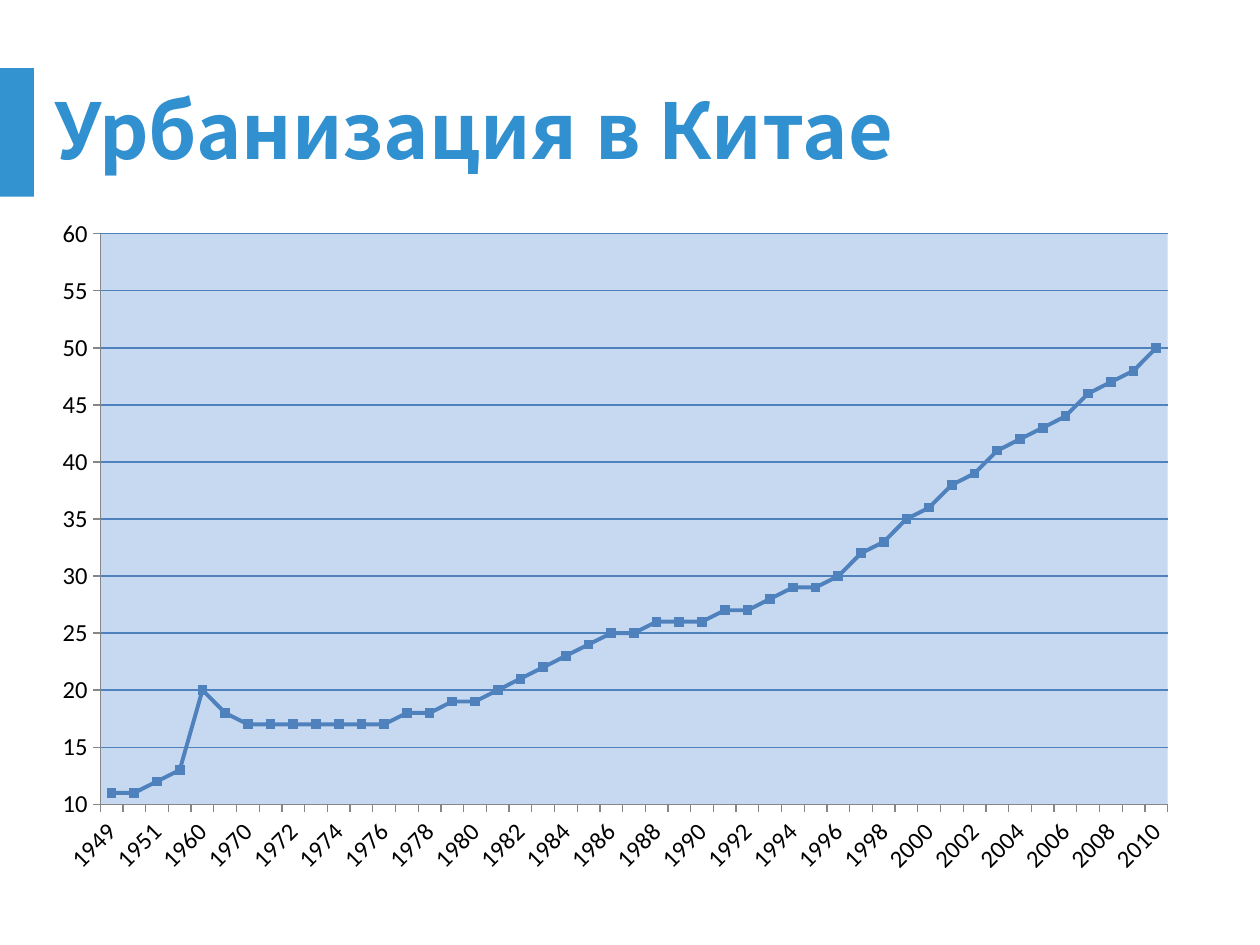
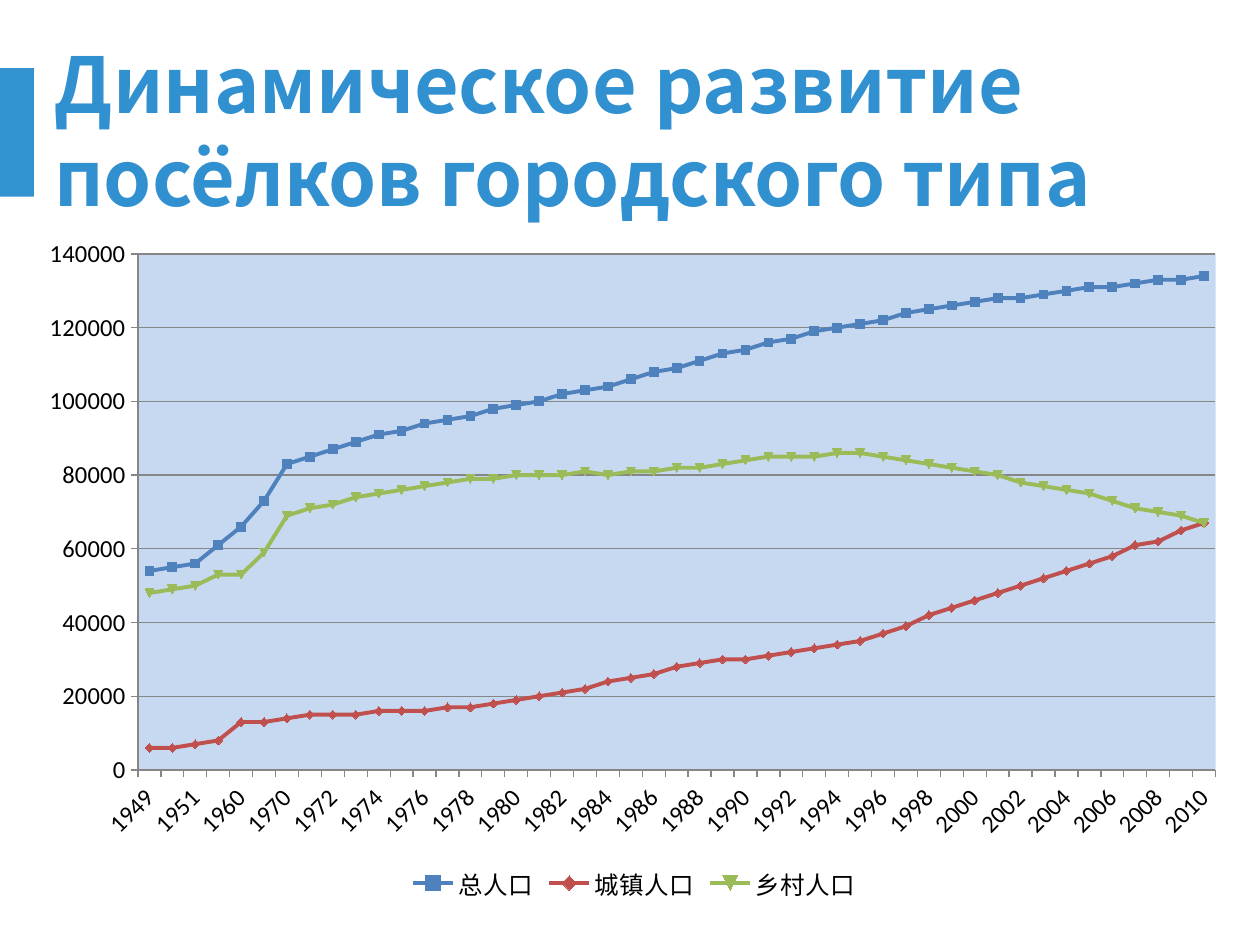
from lxml import etree
from pptx import Presentation
from pptx.chart.data import CategoryChartData
from pptx.dml.color import RGBColor
from pptx.enum.chart import XL_CHART_TYPE as ChartType
from pptx.enum.chart import XL_LEGEND_POSITION as LegendPos
from pptx.enum.chart import XL_TICK_MARK as TickMark
from pptx.enum.shapes import MSO_SHAPE as Shape
from pptx.enum.text import MSO_ANCHOR as Anchor
from pptx.enum.text import PP_ALIGN as Align
from pptx.oxml import parse_xml
from pptx.oxml.ns import nsdecls, qn
from pptx.util import Inches, Pt

YEARS = [1949, 1950, 1951, 1955, 1960, 1965, *range(1970, 2011)]

URBAN_SHARE = [
    11, 11, 12, 13, 20, 18, 17, 17, 17, 17, 17, 17, 17, 18, 18, 19,
    19, 20, 21, 22, 23, 24, 25, 25, 26, 26, 26, 27, 27, 28, 29, 29,
    30, 32, 33, 35, 36, 38, 39, 41, 42, 43, 44, 46, 47, 48, 50]

POPULATION_THOUSANDS = {
    "总人口": [
        54, 55, 56, 61, 66, 73, 83, 85, 87, 89, 91, 92, 94, 95, 96, 98,
        99, 100, 102, 103, 104, 106, 108, 109, 111, 113, 114, 116, 117,
        119, 120, 121, 122, 124, 125, 126, 127, 128, 128, 129, 130, 131,
        131, 132, 133, 133, 134],
    "城镇人口": [
        6, 6, 7, 8, 13, 13, 14, 15, 15, 15, 16, 16, 16, 17, 17, 18,
        19, 20, 21, 22, 24, 25, 26, 28, 29, 30, 30, 31, 32, 33, 34, 35,
        37, 39, 42, 44, 46, 48, 50, 52, 54, 56, 58, 61, 62, 65, 67],
    "乡村人口": [
        48, 49, 50, 53, 53, 59, 69, 71, 72, 74, 75, 76, 77, 78, 79, 79,
        80, 80, 80, 81, 80, 81, 81, 82, 82, 83, 84, 85, 85, 85, 86, 86,
        85, 84, 83, 82, 81, 80, 78, 77, 76, 75, 73, 71, 70, 69, 67],
}


def rgb(value):
    return RGBColor.from_string(value)


def write_text(tf, text, size=14, color="000000", bold=False, font="Calibri"):
    p = tf.paragraphs[0]
    p.alignment = Align.LEFT
    r = p.add_run()
    r.text = text
    r.font.size, r.font.bold, r.font.name = Pt(size), bold, font
    r.font.color.rgb = rgb(color)


class Deck:
    """Holds the shared style and the slide being built."""

    BAND, TITLE, PLOT, AXIS = "3293D0", "3190CF", "C6D9F1", "868686"
    SERIES = ["4F81BD", "C0504D", "9BBB59"]
    TITLE_FONT, CHART_FONT = "Noto Sans CJK SC", "Calibri"

    def __init__(self):
        self.prs = Presentation()
        self.prs.slide_width, self.prs.slide_height = Inches(10), Inches(7.5)
        self.s = None

    def add_slide(self, title):
        self.s = self.prs.slides.add_slide(self.prs.slide_layouts[5])
        self.band(0, 0.54, 0.27, 1.02)
        self.title(title)

    def band(self, *box):
        sp = self.s.shapes.add_shape(Shape.RECTANGLE, *map(Inches, box))
        sp.shadow.inherit = False
        sp.fill.solid()
        sp.fill.fore_color.rgb = rgb(self.BAND)
        sp.line.fill.background()

    def title(self, text):
        sp = self.s.shapes.title
        sp.left, sp.top = Inches(0.33), Inches(0.49)
        sp.width, sp.height = Inches(9), Inches(1.07)
        sp.text_frame.vertical_anchor = Anchor.MIDDLE
        write_text(sp.text_frame, text, size=44, color=self.TITLE, bold=True,
                   font=self.TITLE_FONT)

    def line_chart(self, box, plot_box, series, low, high, step,
                   grid=AXIS, legend=False):
        data = CategoryChartData()
        data.categories = [str(year) for year in YEARS]
        for name, values in series.items():
            data.add_series(name, values)
        chart = self.s.shapes.add_chart(
            ChartType.LINE_MARKERS, *map(Inches, box), data).chart
        chart.font.size, chart.font.name = Pt(14), self.CHART_FONT
        chart.font.color.rgb = rgb("000000")
        chart.has_title = False
        chart.has_legend = legend
        if legend:
            chart.legend.position = LegendPos.BOTTOM
            chart.legend.include_in_layout = False
        chart.plots[0].vary_by_categories = False
        for ser, color in zip(chart.plots[0].series, self.SERIES):
            self.style_series(ser, color)
        self.style_axes(chart, low, high, step, grid)
        self.style_plot_area(chart.element.find(f".//{qn('c:plotArea')}"),
                             plot_box)

    def style_series(self, ser, color):
        ser.smooth = False
        ser.format.line.width = Pt(2.25)
        ser.format.line.color.rgb = rgb(color)
        ser.marker.size = 5
        ser.marker.format.fill.solid()
        ser.marker.format.fill.fore_color.rgb = rgb(color)
        ser.marker.format.line.color.rgb = rgb(color)

    def style_axes(self, chart, low, high, step, grid):
        years, values = chart.category_axis, chart.value_axis
        for axis in (years, values):
            axis.major_tick_mark = TickMark.OUTSIDE
            axis.minor_tick_mark = TickMark.NONE
            axis.format.line.color.rgb = rgb(self.AXIS)
            axis.format.line.width = Pt(0.75)
            axis.tick_labels.font.size = Pt(14)
        values.minimum_scale, values.maximum_scale = low, high
        values.major_unit = step
        values.has_major_gridlines = True
        values.major_gridlines.format.line.color.rgb = rgb(grid)
        values.major_gridlines.format.line.width = Pt(0.75)
        years_xml = chart.element.find(f".//{qn('c:catAx')}")
        body = years_xml.find(f"{qn('c:txPr')}/{qn('a:bodyPr')}")
        body.set("rot", "-2700000")
        body.set("vert", "horz")
        skip = etree.Element(qn("c:tickLblSkip"), val="2")
        years_xml.find(qn("c:noMultiLvlLbl")).addprevious(skip)

    def style_plot_area(self, area, plot_box):
        for old in area.findall(qn("c:layout")):
            area.remove(old)
        modes = "".join(f'<c:{k}Mode val="edge"/>' for k in "xy")
        sizes = "".join(f'<c:{k} val="{v}"/>' for k, v in zip("xywh", plot_box))
        area.insert(0, parse_xml(
            f'<c:layout {nsdecls("c")}><c:manualLayout>'
            f'<c:layoutTarget val="inner"/>{modes}{sizes}'
            '</c:manualLayout></c:layout>'))
        area.append(parse_xml(
            f'<c:spPr {nsdecls("c", "a")}><a:solidFill>'
            f'<a:srgbClr val="{self.PLOT}"/></a:solidFill></c:spPr>'))


def main():
    deck = Deck()
    deck.add_slide("Урбанизация в Китае")
    deck.line_chart((0.34, 1.64, 9.11, 5.39), (0.05, 0.04, 0.93, 0.84),
                    {"Series 1": URBAN_SHARE}, 10, 60, 5,
                    grid=deck.SERIES[0])

    deck.add_slide("Динамическое развитие посёлков городского типа")
    population = {name: [v * 1000 for v in values]
                  for name, values in POPULATION_THOUSANDS.items()}
    deck.line_chart((0.23, 1.8, 9.61, 5.39), (0.09, 0.04, 0.89, 0.76),
                    population, 0, 140000, 20000, legend=True)
    deck.prs.save("out.pptx")


if __name__ == "__main__":
    main()
